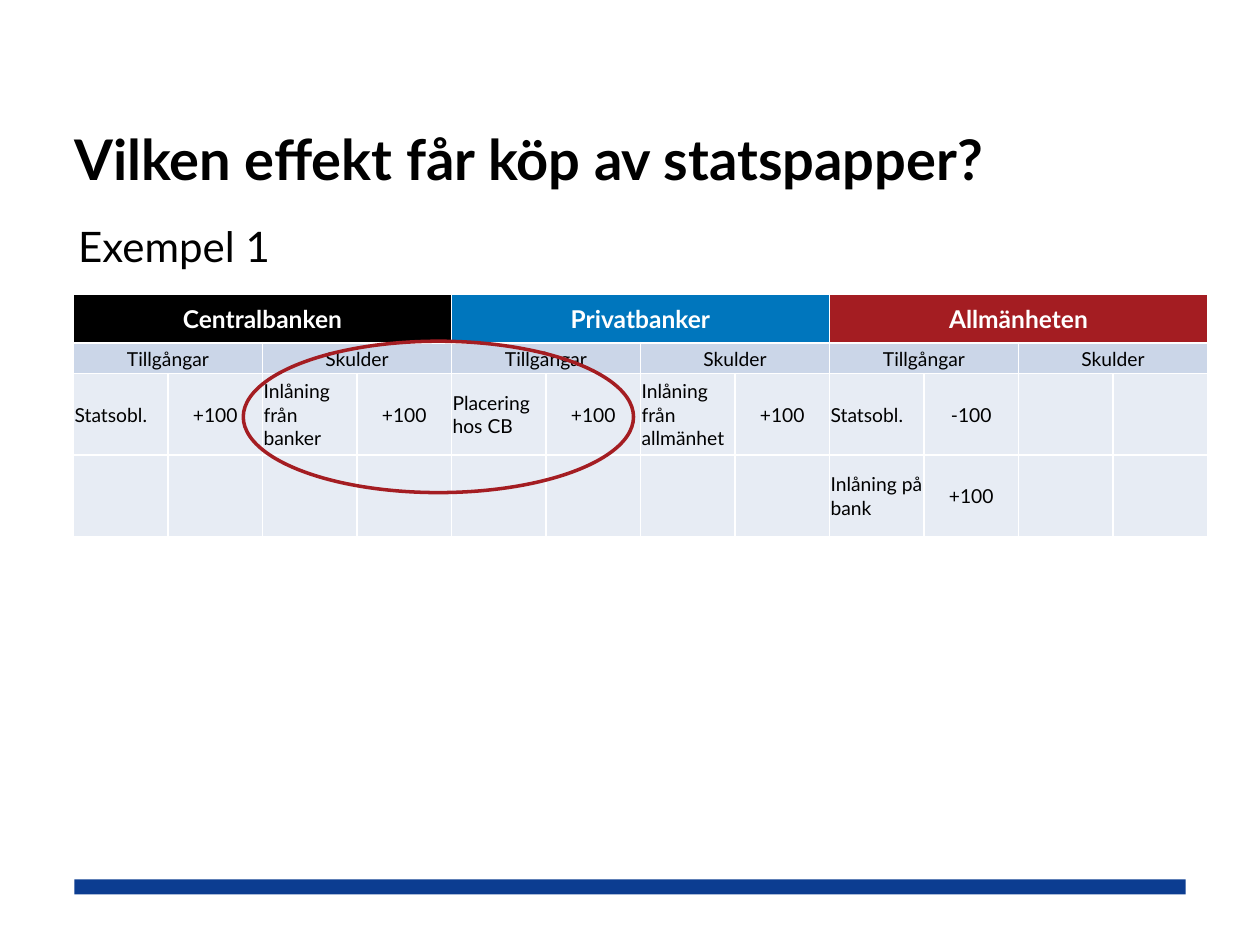
from pptx import Presentation
from pptx.dml.color import RGBColor as RGB
from pptx.enum.shapes import MSO_SHAPE as SHAPE
from pptx.enum.text import MSO_ANCHOR as ANCHOR, PP_ALIGN as ALIGN
from pptx.oxml.ns import qn
from pptx.util import Pt
from lxml.etree import SubElement

COLORS = {
    "black": "000000", "white": "FFFFFF", "blue": "0076BD", "red": "A41D22",
    "navy": "0C3D91", "subhead": "CBD6E8", "body": "E7ECF4",
}
GROUPS = [("Centralbanken", "black"), ("Privatbanker", "blue"), ("Allmänheten", "red")]
SIDES = ["Tillgångar", "Skulder"]
ENTRIES = [
    ["Statsobl.", "+100", "Inlåning från banker", "+100", "Placering hos CB", "+100",
     "Inlåning från allmänhet", "+100", "Statsobl.", "-100", "", ""],
    [""] * 8 + ["Inlåning på bank", "+100", "", ""],
]
ROW_HEIGHTS = [28, 17.5, 46.5, 46.5]
COL_WIDTH = 54


def rgb(name):
    return RGB.from_string(COLORS[name])


class Deck:
    font = "Lato"

    def __init__(self, width, height):
        self.prs = Presentation()
        self.prs.slide_width, self.prs.slide_height = Pt(width), Pt(height)
        self.slide = self.prs.slides.add_slide(self.prs.slide_layouts[5])

    def style(self, p, size, color="black", bold=False, align=ALIGN.LEFT):
        p.alignment = align
        f = p.font
        f.name, f.size, f.bold = self.font, Pt(size), bold
        f.color.rgb = rgb(color)

    def title(self, text, x, y, w, h):
        sp = self.slide.shapes.title
        sp.left, sp.top, sp.width, sp.height = Pt(x), Pt(y), Pt(w), Pt(h)
        tf = sp.text_frame
        tf.margin_left = tf.margin_right = tf.margin_top = tf.margin_bottom = 0
        tf.vertical_anchor = ANCHOR.BOTTOM
        tf.text = text
        self.style(tf.paragraphs[0], 32, bold=True)

    def text(self, text, x, y, w, h, size):
        tf = self.slide.shapes.add_textbox(Pt(x), Pt(y), Pt(w), Pt(h)).text_frame
        tf.word_wrap = False
        tf.text = text
        self.style(tf.paragraphs[0], size, align=ALIGN.CENTER)

    def shape(self, kind, x, y, w, h, fill=None, line=None):
        sp = self.slide.shapes.add_shape(kind, Pt(x), Pt(y), Pt(w), Pt(h))
        sp.shadow.inherit = False
        if fill:
            sp.fill.solid()
            sp.fill.fore_color.rgb = rgb(fill)
        else:
            sp.fill.background()
        if line:
            sp.line.color.rgb = rgb(line)
            sp.line.width = Pt(2)
        else:
            sp.line.fill.background()

    def table(self, x, y, col_width, cols, heights):
        tbl = self.slide.shapes.add_table(
            len(heights), cols, Pt(x), Pt(y), Pt(col_width * cols), Pt(sum(heights))).table
        for col in tbl.columns:
            col.width = Pt(col_width)
        for row, height in zip(tbl.rows, heights):
            row.height = Pt(height)
        return tbl

    def cell(self, tbl, row, col, text, fill, span=1, size=11, color="black",
             bold=False, align=ALIGN.CENTER):
        c = tbl.cell(row, col)
        if span > 1:
            c.merge(tbl.cell(row, col + span - 1))
        c.text = text
        c.margin_left = c.margin_right = c.margin_top = Pt(0.6)
        c.margin_bottom = 0
        c.vertical_anchor = ANCHOR.MIDDLE
        self.style(c.text_frame.paragraphs[0], size, color, bold, align)
        for i in range(span):
            self.borders(tbl.cell(row, col + i), row)
        c.fill.solid()
        c.fill.fore_color.rgb = rgb(fill)

    def borders(self, c, row):
        widths = {"L": 1, "R": 1, "T": 1.5 if row == 1 else 1, "B": 1.5 if row == 0 else 1}
        for side, width in widths.items():
            ln = SubElement(c._tc.get_or_add_tcPr(), qn(f"a:ln{side}"), w=str(Pt(width)))
            SubElement(SubElement(ln, qn("a:solidFill")), qn("a:srgbClr"), val=COLORS["white"])


def main():
    deck = Deck(720, 540)
    deck.shape(SHAPE.RECTANGLE, 42.5, 502.5, 635, 8.6, fill="navy")
    deck.title("Vilken effekt får köp av statspapper?", 42.5, 19.5, 587, 90)

    tbl = deck.table(42, 168, COL_WIDTH, len(ENTRIES[0]), ROW_HEIGHTS)
    for i, (name, fill) in enumerate(GROUPS):
        deck.cell(tbl, 0, 4 * i, name, fill, span=4, size=14, color="white", bold=True)
    for i, side in enumerate(SIDES * len(GROUPS)):
        deck.cell(tbl, 1, 2 * i, side, "subhead", span=2)
    for row, entries in enumerate(ENTRIES, start=2):
        for col, text in enumerate(entries):
            deck.cell(tbl, row, col, text, "body",
                      align=ALIGN.CENTER if col % 2 else ALIGN.LEFT)

    deck.shape(SHAPE.OVAL, 139, 195, 223, 86.5, line="red")
    deck.text("Exempel 1", 37.5, 122.5, 124, 36, 24)
    deck.prs.save("out.pptx")


if __name__ == "__main__":
    main()
